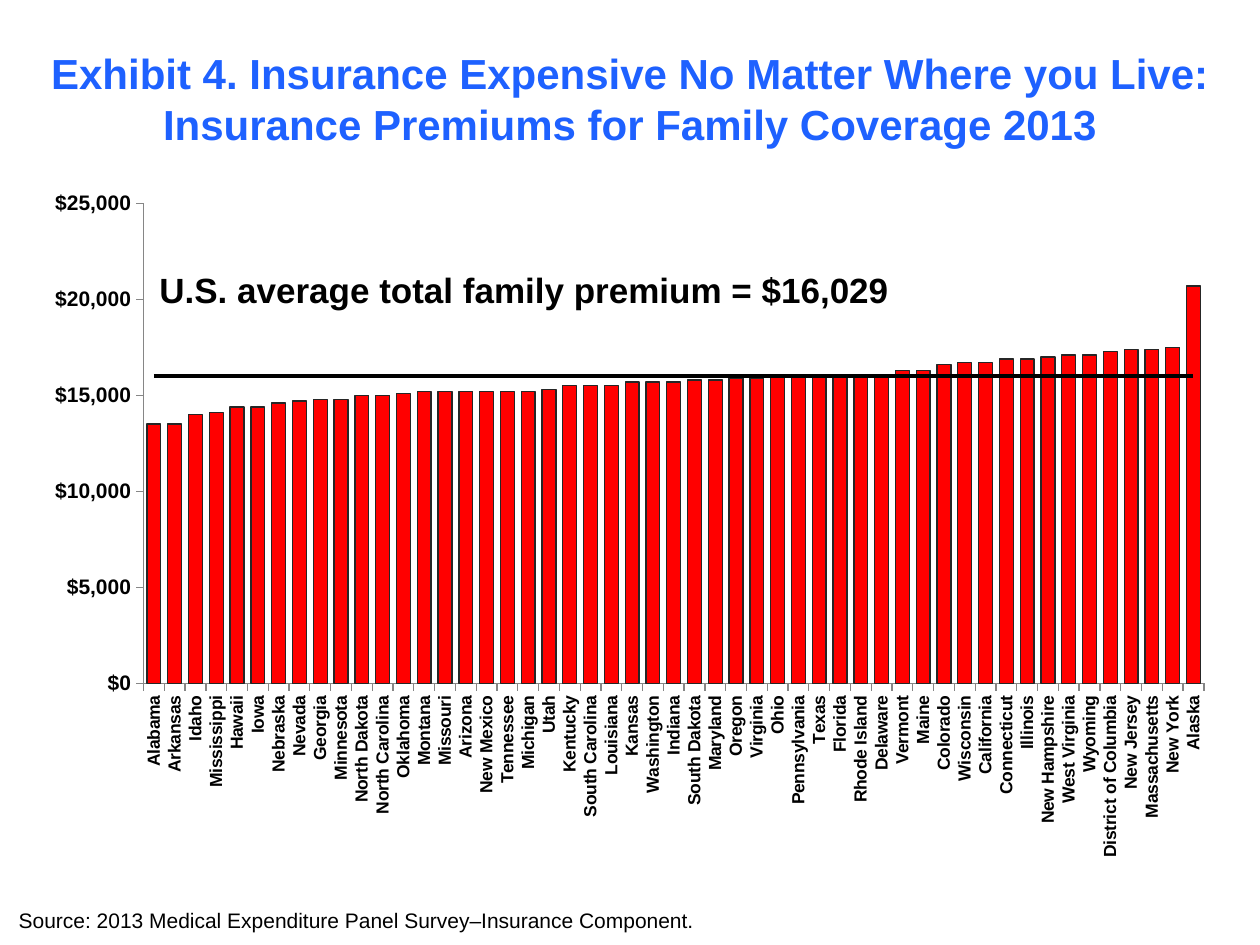
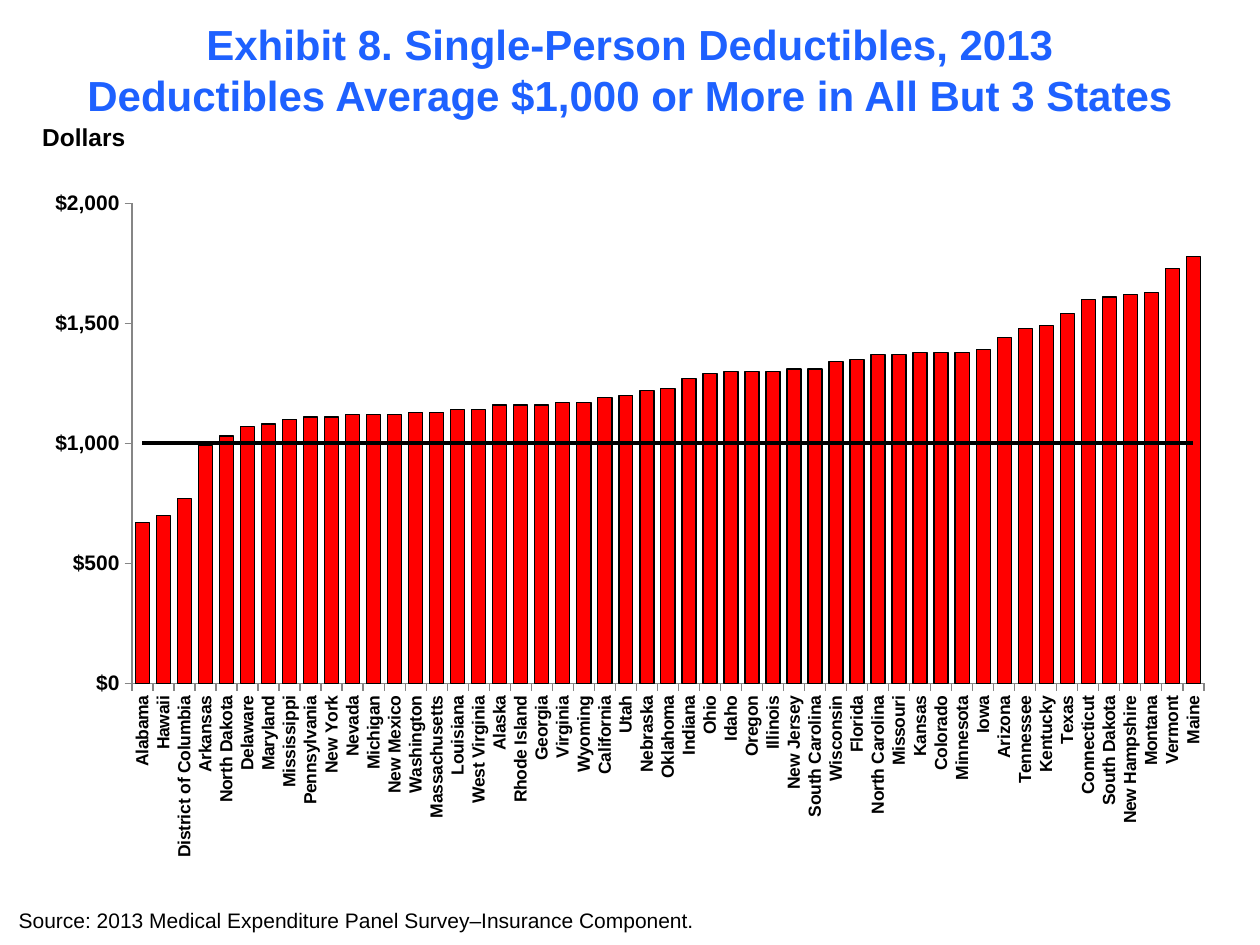
from dataclasses import dataclass
from typing import Any

from lxml import etree
from pptx import Presentation
from pptx.chart.data import CategoryChartData
from pptx.dml.color import RGBColor
from pptx.enum.chart import XL_CHART_TYPE, XL_MARKER_STYLE, XL_TICK_MARK
from pptx.enum.text import MSO_AUTO_SIZE, PP_ALIGN
from pptx.util import Pt

COLUMNS = XL_CHART_TYPE.COLUMN_CLUSTERED
NO_MARKER = XL_MARKER_STYLE.NONE
TICK_OUTSIDE = XL_TICK_MARK.OUTSIDE
TICK_NONE = XL_TICK_MARK.NONE
FIT_SHAPE = MSO_AUTO_SIZE.SHAPE_TO_FIT_TEXT
LEFT = PP_ALIGN.LEFT
CENTER = PP_ALIGN.CENTER

FONT = "Arial"
BLUE = "1E61FF"
BLACK = "000000"
RED = "FF0000"
AXIS_GRAY = "868686"
DOLLARS = '"$"#,##0'
CHART_WIDTH, CHART_HEIGHT = 684, 396
PLOT_TOP, PLOT_HEIGHT, PLOT_RIGHT = 14, 274.3, 670
CHART_NS = "http://schemas.openxmlformats.org/drawingml/2006/chart"


@dataclass(frozen=True)
class Label:
    text: str
    left: float
    top: float
    width: float
    height: float
    size: float
    color: str = BLACK
    bold: bool = True
    align: Any = LEFT
    wrap: bool = False
    line_spacing: float | None = None


@dataclass(frozen=True)
class Exhibit:
    title: str
    title_top: float
    note: Label
    states: str
    amounts: tuple[int, ...]
    reference: int
    maximum: int
    step: int
    outline: str
    plot_left: float


SOURCE = Label("Source: 2013 Medical Expenditure Panel Survey–Insurance Component.",
               3.6, 515, 404.6, 21.6, 12, bold=False)

PREMIUMS = Exhibit(
    title="Exhibit 4. Insurance Expensive No Matter Where you Live: "
          "Insurance Premiums for Family Coverage 2013",
    title_top=23.5,
    note=Label("U.S. average total family premium = $16,029", 84, 149.8, 434.2, 31.7, 20),
    states="Alabama, Arkansas, Idaho, Mississippi, Hawaii, Iowa, Nebraska, Nevada, Georgia, "
           "Minnesota, North Dakota, North Carolina, Oklahoma, Montana, Missouri, Arizona, "
           "New Mexico, Tennessee, Michigan, Utah, Kentucky, South Carolina, Louisiana, Kansas, "
           "Washington, Indiana, South Dakota, Maryland, Oregon, Virginia, Ohio, Pennsylvania, "
           "Texas, Florida, Rhode Island, Delaware, Vermont, Maine, Colorado, Wisconsin, "
           "California, Connecticut, Illinois, New Hampshire, West Virginia, Wyoming, "
           "District of Columbia, New Jersey, Massachusetts, New York, Alaska",
    amounts=(13500, 13500, 14000, 14100, 14400, 14400, 14600, 14700, 14800, 14800, 15000,
             15000, 15100, 15200, 15200, 15200, 15200, 15200, 15200, 15300, 15500, 15500,
             15500, 15700, 15700, 15700, 15800, 15800, 15900, 15900, 16000, 16000, 16000,
             16100, 16100, 16100, 16300, 16300, 16600, 16700, 16700, 16900, 16900, 17000,
             17100, 17100, 17300, 17400, 17400, 17500, 20700),
    reference=16000,
    maximum=25000,
    step=5000,
    outline="262626",
    plot_left=64,
)

DEDUCTIBLES = Exhibit(
    title="Exhibit 8. Single-Person Deductibles, 2013\v"
          "Deductibles Average $1,000 or More in All But 3 States",
    title_top=7,
    note=Label("Dollars", 17, 66.2, 62.6, 24.5, 14),
    states="Alabama, Hawaii, District of Columbia, Arkansas, North Dakota, Delaware, Maryland, "
           "Mississippi, Pennsylvania, New York, Nevada, Michigan, New Mexico, Washington, "
           "Massachusetts, Louisiana, West Virginia, Alaska, Rhode Island, Georgia, Virginia, "
           "Wyoming, California, Utah, Nebraska, Oklahoma, Indiana, Ohio, Idaho, Oregon, "
           "Illinois, New Jersey, South Carolina, Wisconsin, Florida, North Carolina, Missouri, "
           "Kansas, Colorado, Minnesota, Iowa, Arizona, Tennessee, Kentucky, Texas, "
           "Connecticut, South Dakota, New Hampshire, Montana, Vermont, Maine",
    amounts=(670, 700, 770, 990, 1030, 1070, 1080, 1100, 1110, 1110, 1120, 1120, 1120, 1130,
             1130, 1140, 1140, 1160, 1160, 1160, 1170, 1170, 1190, 1200, 1220, 1230, 1270,
             1290, 1300, 1300, 1300, 1310, 1310, 1340, 1350, 1370, 1370, 1380, 1380, 1380,
             1390, 1440, 1480, 1490, 1540, 1600, 1610, 1620, 1630, 1730, 1780),
    reference=1000,
    maximum=2000,
    step=500,
    outline=BLACK,
    plot_left=57.4,
)


def color_of(value: str) -> RGBColor:
    return RGBColor.from_string(value)


def apply(target: Any, values: dict[str, Any]) -> None:
    for name, value in values.items():
        setattr(target, name, value)


def style_font(font: Any, size: float, bold: bool, color: str = BLACK) -> None:
    apply(font, {"name": FONT, "size": Pt(size), "bold": bold})
    font.color.rgb = color_of(color)


def style_line(line: Any, color: str, width: float) -> None:
    line.color.rgb = color_of(color)
    line.width = Pt(width)


def add_label(page: Any, label: Label) -> None:
    box = page.shapes.add_textbox(Pt(label.left), Pt(label.top), Pt(label.width), Pt(label.height))
    frame = box.text_frame
    frame.word_wrap = label.wrap
    if not label.wrap:
        frame.auto_size = FIT_SHAPE
    para = frame.paragraphs[0]
    para.text = label.text
    para.alignment = label.align
    if label.line_spacing:
        para.line_spacing = Pt(label.line_spacing)
    for span in para.runs:
        style_font(span.font, label.size, label.bold, label.color)


def add_node(parent: Any, tag: str, value: Any = None) -> Any:
    node = etree.SubElement(parent, f"{{{CHART_NS}}}{tag}")
    if value is not None:
        node.set("val", str(value))
    return node


def turn_last_series_into_line(chart: Any) -> None:
    bars = chart.element.xpath(".//c:barChart")[0]
    series = bars.xpath("c:ser")[-1]
    for unused in series.xpath("c:invertIfNegative"):
        series.remove(unused)
    lines = etree.Element(f"{{{CHART_NS}}}lineChart")
    add_node(lines, "grouping", "standard")
    add_node(lines, "varyColors", 0)
    lines.append(series)
    add_node(lines, "marker", 1)
    for axis in bars.xpath("c:axId"):
        add_node(lines, "axId", axis.get("val"))
    bars.addnext(lines)


def place_plot(chart: Any, left: float) -> None:
    area = chart.element.xpath(".//c:plotArea")[0]
    for previous in area.xpath("c:layout"):
        area.remove(previous)
    layout = add_node(area, "layout")
    area.insert(0, layout)
    manual = add_node(layout, "manualLayout")
    settings = {"layoutTarget": "inner", "xMode": "edge", "yMode": "edge",
                "x": left / CHART_WIDTH, "y": PLOT_TOP / CHART_HEIGHT,
                "w": (PLOT_RIGHT - left) / CHART_WIDTH, "h": PLOT_HEIGHT / CHART_HEIGHT}
    for tag, value in settings.items():
        add_node(manual, tag, value)


def style_axis(axis: Any, size: float) -> None:
    apply(axis, {"has_major_gridlines": False, "major_tick_mark": TICK_OUTSIDE,
                 "minor_tick_mark": TICK_NONE})
    style_font(axis.tick_labels.font, size, True)
    style_line(axis.format.line, AXIS_GRAY, 0.75)


def add_exhibit_chart(page: Any, exhibit: Exhibit) -> None:
    data = CategoryChartData()
    data.categories = exhibit.states.split(", ")
    data.add_series("Series 1", exhibit.amounts)
    data.add_series("Series 2", [exhibit.reference] * len(exhibit.amounts))
    chart = page.shapes.add_chart(COLUMNS, Pt(18), Pt(102.24), Pt(CHART_WIDTH),
                                  Pt(CHART_HEIGHT), data).chart
    apply(chart, {"has_legend": False, "has_title": False})
    style_font(chart.font, 18, False)
    turn_last_series_into_line(chart)
    place_plot(chart, exhibit.plot_left)

    columns, reference = chart.plots
    apply(columns, {"gap_width": 50, "vary_by_categories": False})
    bar_format = columns.series[0].format
    bar_format.fill.solid()
    bar_format.fill.fore_color.rgb = color_of(RED)
    style_line(bar_format.line, exhibit.outline, 0.75)
    average = reference.series[0]
    average.smooth = False
    average.marker.style = NO_MARKER
    style_line(average.format.line, BLACK, 2.25)

    style_axis(chart.category_axis, 10)
    body = chart.element.xpath(".//c:catAx/c:txPr/a:bodyPr")[0]
    body.set("rot", "-5400000")
    body.set("vert", "horz")
    style_axis(chart.value_axis, 12)
    apply(chart.value_axis, {"minimum_scale": 0, "maximum_scale": exhibit.maximum,
                             "major_unit": exhibit.step})
    apply(chart.value_axis.tick_labels, {"number_format": DOLLARS,
                                         "number_format_is_linked": False})


def add_exhibit(deck: Any, exhibit: Exhibit) -> None:
    page = deck.slides.add_slide(deck.slide_layouts[6])
    add_exhibit_chart(page, exhibit)
    title = Label(exhibit.title, 0, exhibit.title_top, 720, 36, 24, BLUE,
                  align=CENTER, wrap=True, line_spacing=29)
    for label in (title, SOURCE, exhibit.note):
        add_label(page, label)


def main() -> None:
    deck = Presentation()
    apply(deck, {"slide_width": Pt(720), "slide_height": Pt(540)})
    for exhibit in (PREMIUMS, DEDUCTIBLES):
        add_exhibit(deck, exhibit)
    deck.save("out.pptx")


if __name__ == "__main__":
    main()
